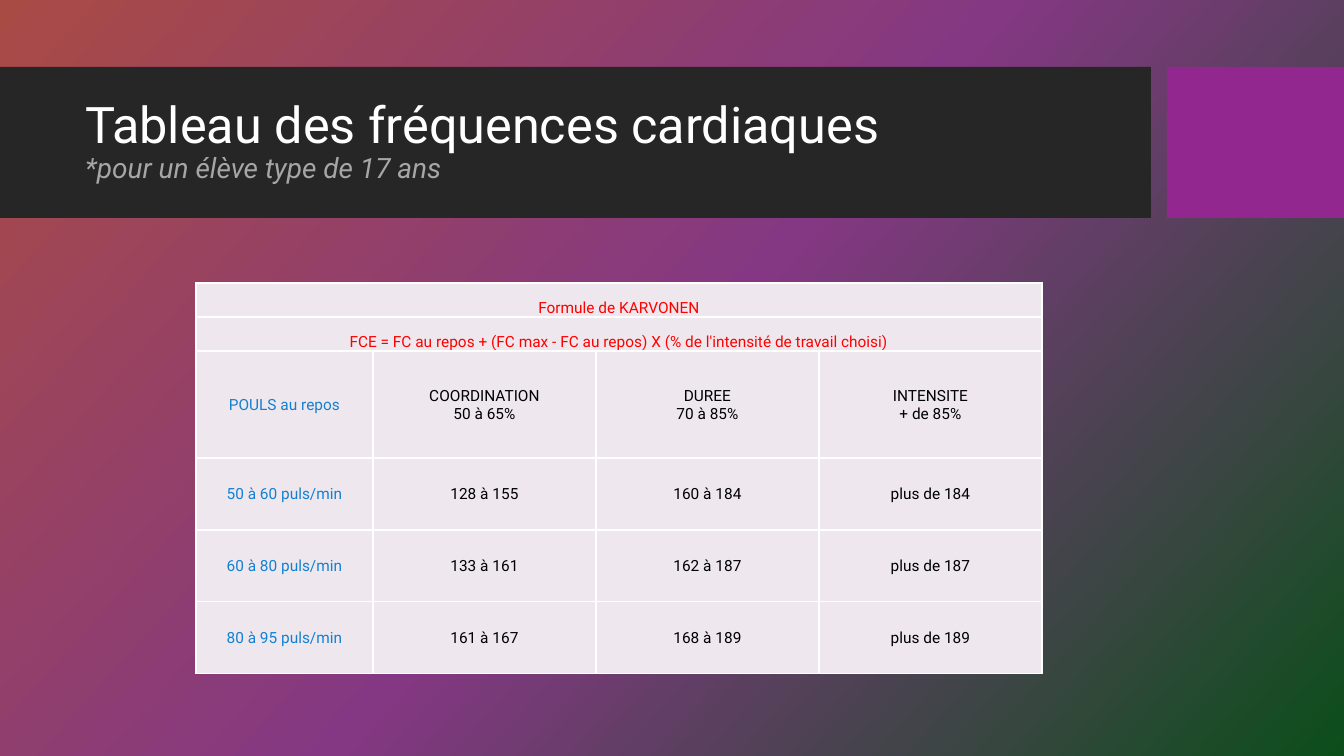
import copy
from dataclasses import dataclass

import pptx
import pptx.dml.color
import pptx.enum.shapes
import pptx.enum.text
import pptx.oxml
import pptx.oxml.ns
import pptx.util

ANCHOR = pptx.enum.text.MSO_ANCHOR


@dataclass(frozen=True)
class Theme:
    """Colours, font and type sizes of the slide."""
    font: str = "Roboto"
    backdrop: tuple = ((0, "A94B45"), (0.5, "843883"), (1, "0C4E1A"))
    backdrop_angle: int = 318
    band: str = "262626"
    accent: str = "92278F"
    title: str = "FFFFFF"
    subtitle: str = "A6A6A6"
    cell: str = "EEE8EE"
    border: str = "FFFFFF"
    formula: str = "FF0000"
    pulse: str = "1480D1"
    value: str = "000000"
    title_size: int = 36
    subtitle_size: int = 20
    table_size: int = 11


THEME = Theme()
FORMULAS = [
    "Formule de KARVONEN",
    "FCE = FC au repos + (FC max - FC au repos) X (% de l'intensité de travail choisi)",
]
ZONES = [
    ("POULS au repos", "COORDINATION\n50 à 65%", "DUREE\n70 à 85%", "INTENSITE\n+ de 85%"),
    ("50 à 60 puls/min", "128 à 155", "160 à 184", "plus de 184"),
    ("60 à 80 puls/min", "133 à 161", "162 à 187", "plus de 187"),
    ("80 à 95 puls/min", "161 à 167", "168 à 189", "plus de 189"),
]


def px(length):
    """Turn whole pixels into EMU."""
    return pptx.util.Emu(round(length * 914400 / 100.8))


def rgb(colour):
    """Turn a hex string into a colour."""
    return pptx.dml.color.RGBColor.from_string(colour)


def add_run(paragraph, text, size, colour, italic=False):
    """Add one formatted run."""
    run = paragraph.add_run()
    run.text = text
    run.font.name = THEME.font
    run.font.size = pptx.util.Pt(size)
    run.font.color.rgb = rgb(colour)
    run.font.italic = italic


def paint_backdrop(slide):
    """Fill the background with the three-stop gradient."""
    fill = slide.background.fill
    fill.gradient()
    fill.gradient_angle = THEME.backdrop_angle
    stop_list = slide.element.find(".//" + pptx.oxml.ns.qn("a:gsLst"))
    stop_list.insert(1, copy.deepcopy(stop_list[0]))
    for stop, (position, colour) in zip(fill.gradient_stops, THEME.backdrop):
        stop.position = position
        stop.color.rgb = rgb(colour)


def add_block(slide, box, colour):
    """Add a plain rectangle."""
    block = slide.shapes.add_shape(pptx.enum.shapes.MSO_SHAPE.RECTANGLE, *map(px, box))
    block.shadow.inherit = False
    block.fill.solid()
    block.fill.fore_color.rgb = rgb(colour)
    block.line.fill.background()


def add_header(slide, box):
    """Place the title band, its accent block and the title."""
    left, top, width, height = box
    accent_width, gap = 177, 16
    band_width = width - accent_width - gap
    add_block(slide, (left, top, band_width, height), THEME.band)
    add_block(slide, (left + width - accent_width, top, accent_width, height), THEME.accent)

    title = slide.shapes.title
    slide.shapes.element.append(title.element)
    title.left, title.top = px(left + 75), px(top + 16)
    title.width, title.height = px(band_width - 92), px(height - 32)
    frame = title.text_frame
    frame.word_wrap = True
    frame.auto_size = pptx.enum.text.MSO_AUTO_SIZE.NONE
    frame.vertical_anchor = ANCHOR.MIDDLE
    heading = frame.paragraphs[0]
    heading.alignment = pptx.enum.text.PP_ALIGN.LEFT
    heading.line_spacing = 0.9
    add_run(heading, "Tableau des fréquences cardiaques", THEME.title_size, THEME.title)
    heading.add_line_break()
    add_run(heading, "*pour un élève type de 17 ans", THEME.subtitle_size, THEME.subtitle, True)


def style_cell(cell, anchor):
    """Set fill, insets, anchor and borders of a cell."""
    cell.fill.solid()
    cell.fill.fore_color.rgb = rgb(THEME.cell)
    cell.margin_left = cell.margin_right = cell.margin_top = px(1)
    cell.margin_bottom = 0
    cell.vertical_anchor = anchor
    properties = cell._tc.get_or_add_tcPr()
    for index, side in enumerate(("lnL", "lnR", "lnT", "lnB")):
        properties.insert(index, pptx.oxml.parse_xml(
            f'<a:{side} {pptx.oxml.ns.nsdecls("a")} w="12700"><a:solidFill>'
            f'<a:srgbClr val="{THEME.border}"/></a:solidFill></a:{side}>'))


def write_cell(cell, text, colour):
    """Write centred lines into a cell."""
    paragraph = cell.text_frame.paragraphs[0]
    paragraph.alignment = pptx.enum.text.PP_ALIGN.CENTER
    for index, line in enumerate(text.split("\n")):
        if index:
            paragraph.add_line_break()
        add_run(paragraph, line, THEME.table_size, colour)


def add_heart_rates(slide, box):
    """Place the heart rate table."""
    left, top, width, height = box
    pulse_width, formula_height, zone_height = 177, 34, 107
    rate_width = (width - pulse_width) // 3
    rate_height = (height - 2 * formula_height - zone_height) // 3
    table = slide.shapes.add_table(6, 4, *map(px, box)).table
    table.first_row = table.horz_banding = False
    for column, size in zip(table.columns, [pulse_width] + [rate_width] * 3):
        column.width = px(size)
    for row, size in zip(table.rows, [formula_height] * 2 + [zone_height] + [rate_height] * 3):
        row.height = px(size)

    for row, formula in enumerate(FORMULAS):
        for column in range(4):
            style_cell(table.cell(row, column), ANCHOR.BOTTOM)
        table.cell(row, 0).merge(table.cell(row, 3))
        write_cell(table.cell(row, 0), formula, THEME.formula)
    for row, texts in enumerate(ZONES, len(FORMULAS)):
        for column, text in enumerate(texts):
            style_cell(table.cell(row, column), ANCHOR.MIDDLE)
            write_cell(table.cell(row, column), text, THEME.value if column else THEME.pulse)


def main():
    """Build and save the slide."""
    deck = pptx.Presentation()
    deck.slide_width, deck.slide_height = px(1344), px(756)
    slide = deck.slides.add_slide(deck.slide_layouts[5])
    paint_backdrop(slide)
    add_header(slide, (0, 67, 1344, 151))
    add_heart_rates(slide, (196, 283, 846, 391))
    deck.save("out.pptx")


if __name__ == "__main__":
    main()
